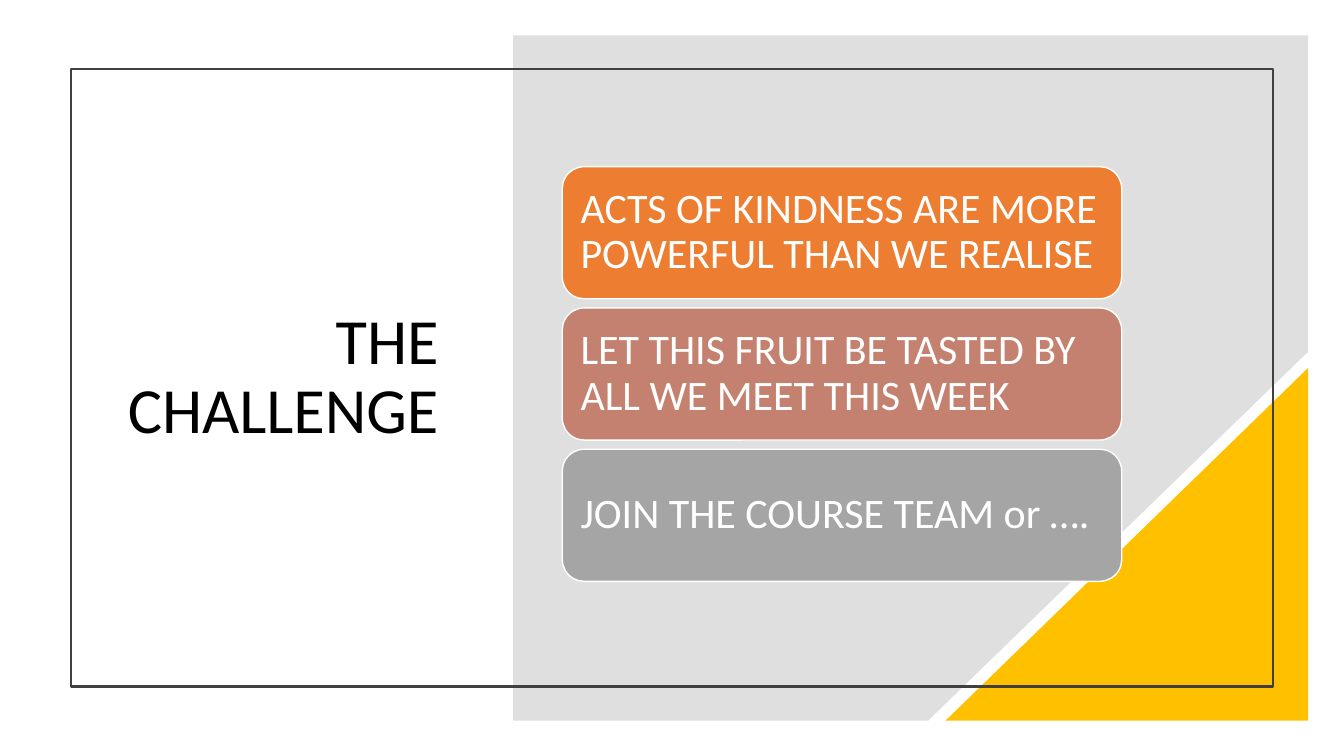
from lxml import etree
from pptx import Presentation
from pptx.dml.color import RGBColor
from pptx.enum.shapes import MSO_SHAPE
from pptx.enum.text import MSO_ANCHOR, PP_ALIGN
from pptx.oxml.ns import qn
from pptx.util import Cm, Pt

BLACK = RGBColor(0x00, 0x00, 0x00)
WHITE = RGBColor(0xFF, 0xFF, 0xFF)
GREY = RGBColor(0x80, 0x80, 0x80)
FRAME_GREY = RGBColor(0x40, 0x40, 0x40)
GOLD = RGBColor(0xFF, 0xC0, 0x00)
ORANGE = RGBColor(0xED, 0x7D, 0x31)
ROSE = RGBColor(0xC4, 0x81, 0x70)
SILVER = RGBColor(0xA5, 0xA5, 0xA5)


def write(shape, text, size, color, alignment):
    frame = shape.text_frame
    frame.text = text
    frame.word_wrap = True
    frame.vertical_anchor = MSO_ANCHOR.MIDDLE
    paragraph = frame.paragraphs[0]
    paragraph.alignment = alignment
    paragraph.line_spacing = 0.9
    font = paragraph.runs[0].font
    font.name = "Calibri"
    font.size = Pt(size)
    font.color.rgb = color


deck = Presentation()
deck.slide_width = Cm(33.87)
deck.slide_height = Cm(19.05)
page = deck.slides.add_slide(deck.slide_layouts[6])

title = page.shapes.add_textbox(Cm(2.79), Cm(3.3), Cm(8.51), Cm(12.45))
write(title, "THE CHALLENGE", 46, BLACK, PP_ALIGN.RIGHT)

outline = page.shapes.build_freeform(Cm(12.93), Cm(0.89))
corners = [(32.97, 0.89), (32.97, 8.86), (23.39, 18.16), (12.93, 18.16)]
outline.add_line_segments([(Cm(x), Cm(y)) for x, y in corners], close=True)
panel = outline.convert_to_shape()
panel.shadow.inherit = False
panel.fill.solid()
panel.fill.fore_color.rgb = GREY
panel.line.fill.background()
panel_color = panel.element.spPr.find(qn("a:solidFill")).find(qn("a:srgbClr"))
etree.SubElement(panel_color, qn("a:alpha")).set("val", "25000")

triangle = page.shapes.add_shape(
    MSO_SHAPE.RIGHT_TRIANGLE, Cm(23.83), Cm(9.27), Cm(9.14), Cm(8.89)
)
triangle.element.spPr.find(qn("a:xfrm")).set("flipH", "1")
triangle.shadow.inherit = False
triangle.fill.solid()
triangle.fill.fore_color.rgb = GOLD
triangle.line.fill.background()

border = page.shapes.add_shape(
    MSO_SHAPE.RECTANGLE, Cm(1.78), Cm(1.73), Cm(30.3), Cm(15.57)
)
border.shadow.inherit = False
border.fill.background()
border.line.color.rgb = FRAME_GREY
border.line.width = Pt(1.5)

challenges = [
    ("ACTS OF KINDNESS ARE MORE POWERFUL THAN WE REALISE", ORANGE),
    ("LET THIS FRUIT BE TASTED BY ALL WE MEET THIS WEEK", ROSE),
    ("JOIN THE COURSE TEAM or ….", SILVER),
]
for index, (text, color) in enumerate(challenges):
    card = page.shapes.add_shape(
        MSO_SHAPE.ROUNDED_RECTANGLE,
        Cm(14.17), Cm(4.2 + 3.56 * index), Cm(14.1), Cm(3.33),
    )
    card.shadow.inherit = False
    card.fill.solid()
    card.fill.fore_color.rgb = color
    card.line.color.rgb = WHITE
    card.line.width = Pt(1)
    frame = card.text_frame
    frame.margin_left = frame.margin_right = Cm(0.3)
    frame.margin_top = frame.margin_bottom = Cm(0.3)
    write(card, text, 30, WHITE, PP_ALIGN.LEFT)

deck.save("out.pptx")
